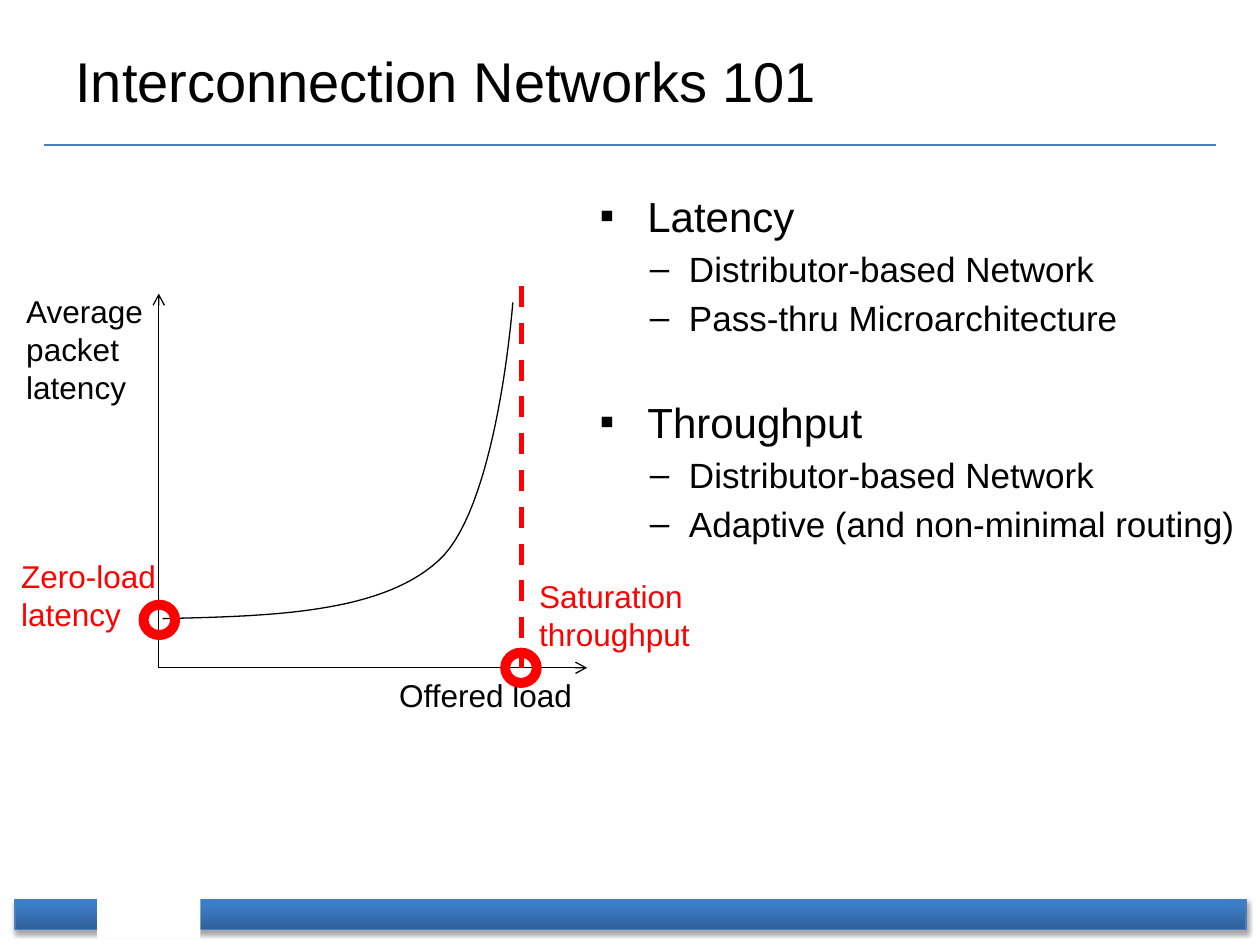
import pptx
import pptx.util
import pptx.dml.color
import pptx.enum.dml
import pptx.enum.shapes
import pptx.enum.text
import pptx.oxml
import pptx.oxml.ns

Inches = pptx.util.Inches
Pt = pptx.util.Pt
KIND = pptx.enum.shapes.MSO_SHAPE
BLACK, RED, BLUE, WHITE = "000000", "FF0000", "4B7EBC", "FFFFFF"


def color(code):
    return pptx.dml.color.RGBColor.from_string(code)


def node(parent, tag, **attrs):
    child = parent.makeelement(pptx.oxml.ns.qn(tag), attrs)
    parent.append(child)
    return child


def shape(slide, kind, box, fill):
    item = slide.shapes.add_shape(kind, *map(Inches, box))
    item.shadow.inherit = False
    item.fill.solid()
    item.fill.fore_color.rgb = color(fill)
    item.line.fill.background()
    return item


def bar(slide, box):
    item = shape(slide, KIND.RECTANGLE, box, BLUE)
    item.fill.gradient()
    item.fill.gradient_angle = 90
    for stop, (place, code) in zip(item.fill.gradient_stops, [(0, "2F5F99"), (0.8, "3D7CC7")]):
        stop.position = place
        stop.color.rgb = color(code)
    item.line.color.rgb = color(BLUE)
    item.line.width = Pt(0.75)
    effects = item._element.spPr.find(pptx.oxml.ns.qn("a:effectLst"))
    shade = node(effects, "a:outerShdw", blurRad=str(Pt(3.1)), dist=str(Pt(1.8)),
                 dir="5400000", rotWithShape="0")
    tint = node(shade, "a:srgbClr", val=BLACK)
    node(tint, "a:alpha", val="35000")


def line(slide, start, end, code=BLACK, width=0.75, arrow=False, dash=False):
    item = slide.shapes.add_connector(
        pptx.enum.shapes.MSO_CONNECTOR.STRAIGHT, *map(Inches, start + end))
    item.line.color.rgb = color(code)
    item.line.width = Pt(width)
    if dash:
        item.line.dash_style = pptx.enum.dml.MSO_LINE.DASH
    if arrow:
        node(item.line._get_or_add_ln(), "a:tailEnd", type="arrow")
    node(item._element.spPr, "a:effectLst")


def style(para, size, code=BLACK):
    para.font.name = "Arial"
    para.font.size = Pt(size)
    para.font.color.rgb = color(code)


def label(slide, box, text, code=BLACK, size=18, wrap=False):
    item = slide.shapes.add_textbox(*map(Inches, box))
    frame = item.text_frame
    frame.word_wrap = wrap
    frame.text = text
    for para in frame.paragraphs:
        style(para, size, code)
    return frame


def bullets(slide, box, groups):
    frame = slide.shapes.add_textbox(*map(Inches, box)).text_frame
    frame.word_wrap = True
    rows = []
    for head, items in groups:
        rows.append((head, 0, 33 if rows else 0))
        rows += [(text, 1, 4) for text in items]
    for index, (text, level, gap) in enumerate(rows):
        para = frame.add_paragraph() if index else frame.paragraphs[0]
        para.text = text
        para.level = level
        para.space_before = Pt(gap)
        left, hang, mark, size = [(0.38, 0.38, "▪", 24), (0.71, 0.31, "–", 20)][level]
        props = para._p.get_or_add_pPr()
        props.set("marL", str(Inches(left)))
        props.set("indent", str(-Inches(hang)))
        node(props, "a:buFont", typeface="Arial")
        node(props, "a:buChar", char=mark)
        style(para, size)


def bezier(points, steps=30):
    for step in range(1, steps + 1):
        t = step / steps
        weights = ((1 - t) ** 3, 3 * t * (1 - t) ** 2, 3 * t * t * (1 - t), t ** 3)
        yield tuple(round(sum(w * p[axis] for w, p in zip(weights, points))) for axis in (0, 1))


def curve(slide, points):
    points = [(Inches(x), Inches(y)) for x, y in points]
    build = slide.shapes.build_freeform(*points[0])
    for first in range(0, len(points) - 1, 3):
        build.add_line_segments(list(bezier(points[first:first + 4])), close=False)
    item = build.convert_to_shape()
    item.shadow.inherit = False
    item.fill.background()
    item.line.color.rgb = color(BLACK)
    item.line.width = Pt(0.75)


def graph(slide):
    base = (1.26, 5.3)
    line(slide, base, (1.26, 2.33), arrow=True)
    line(slide, base, (4.66, 5.3), arrow=True)
    label(slide, (0.11, 2.27, 1.15, 1.01), "Average\npacket\nlatency")
    label(slide, (3.07, 5.32, 1.59, 0.4), "Offered load")
    curve(slide, [(1.29, 4.91), (2.15, 4.89), (3.02, 4.87), (3.48, 4.45),
                  (3.95, 4.03), (4.07, 2.4), (4.07, 2.4)])
    shape(slide, KIND.DONUT, (1.1, 4.76, 0.33, 0.32), RED)
    label(slide, (0.07, 4.37, 1.28, 0.71), "Zero-load\nlatency", RED)
    line(slide, (4.14, 2.27), (4.14, 5.3), RED, 3, dash=True)
    shape(slide, KIND.DONUT, (3.97, 5.14, 0.33, 0.32), RED)
    label(slide, (4.18, 4.53, 1.41, 0.71), "Saturation\nthroughput", RED)


def main():
    deck = pptx.Presentation()
    deck.slide_width, deck.slide_height = Inches(10), Inches(7.5)
    slide = deck.slides.add_slide(deck.slide_layouts[6])
    bar(slide, (0.12, 7.14, 9.77, 0.24))
    line(slide, (0.35, 1.15), (9.65, 1.15), BLUE)
    shape(slide, KIND.RECTANGLE, (0.77, 7.06, 0.82, 0.39), WHITE)
    title = label(slide, (0.5, 0.13, 9, 1.01), "Interconnection Networks 101", size=32, wrap=True)
    title.vertical_anchor = pptx.enum.text.MSO_ANCHOR.MIDDLE
    bullets(slide, (4.66, 1.46, 5.29, 5.33), [
        ("Latency", ["Distributor-based Network", "Pass-thru Microarchitecture"]),
        ("Throughput", ["Distributor-based Network", "Adaptive (and non-minimal routing)"]),
    ])
    graph(slide)
    deck.save("out.pptx")


if __name__ == "__main__":
    main()
